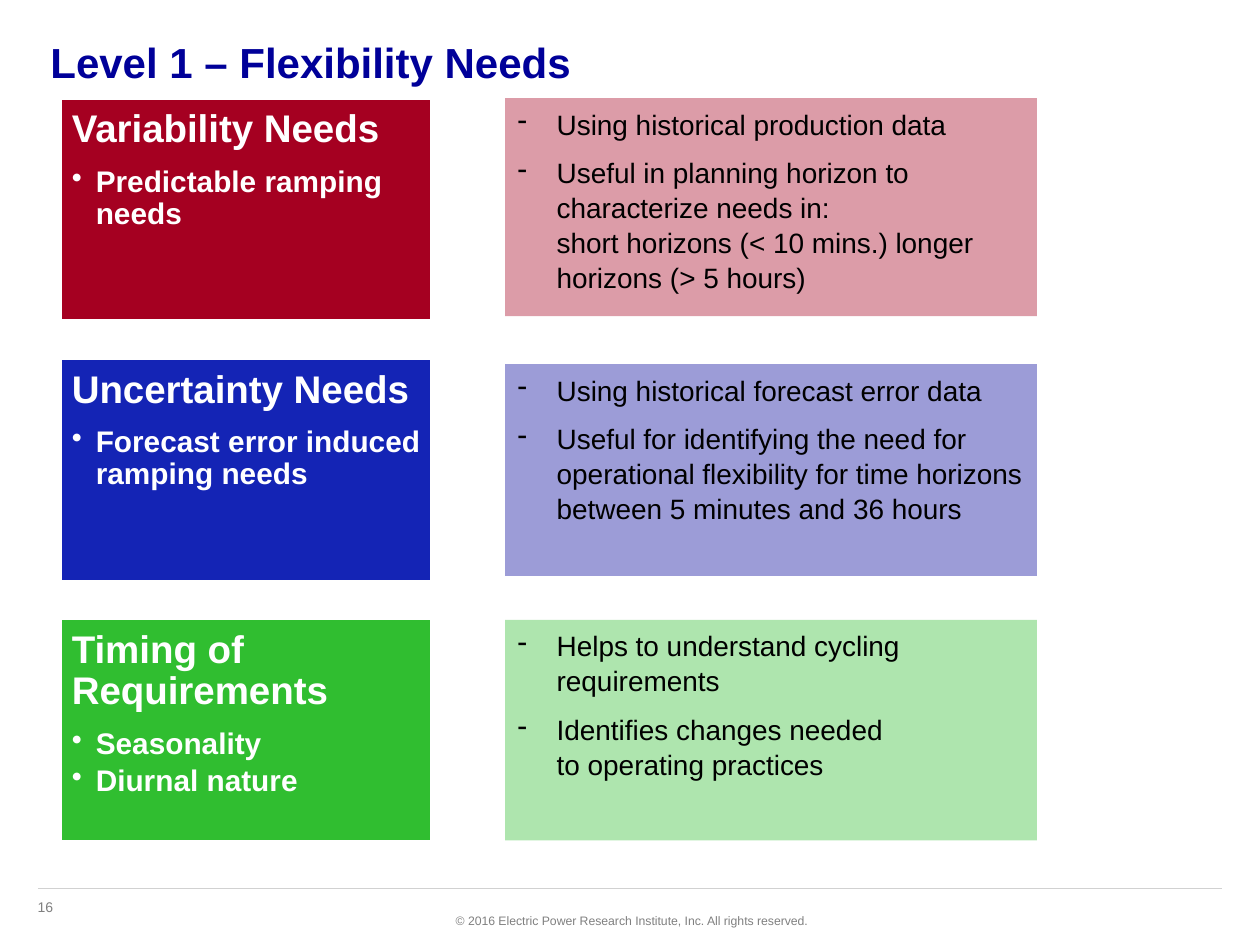
from dataclasses import dataclass

from lxml.etree import SubElement
from pptx import Presentation
from pptx.dml.color import RGBColor
from pptx.enum.shapes import MSO_CONNECTOR, MSO_SHAPE
from pptx.enum.text import MSO_ANCHOR, MSO_AUTO_SIZE, PP_ALIGN
from pptx.oxml.ns import qn
from pptx.util import Inches, Pt


@dataclass(frozen=True)
class Theme:
    font: str = "Arial"
    navy: str = "000099"
    blue: str = "1424B5"
    red: str = "A50021"
    green: str = "30BE30"
    white: str = "FFFFFF"
    black: str = "000000"
    grey: str = "808080"
    rule: str = "D1D1D1"
    title: int = 24
    head: int = 22
    item: int = 17
    note: int = 16
    page: int = 8
    foot: int = 7


def write(para, text, *, theme, size, color, bold=False, align=PP_ALIGN.LEFT,
          mark=None, hang=0, lead=1.0, before=0, after=0):
    """Fill one paragraph and format it."""
    props = para._p.get_or_add_pPr()
    props.set("marL", str(Inches(hang)))
    props.set("indent", str(-Inches(hang)))
    if mark:
        SubElement(props, qn("a:buChar")).set("char", mark)
    else:
        SubElement(props, qn("a:buNone"))
    para.alignment = align
    para.line_spacing = lead
    para.space_before, para.space_after = Pt(before), Pt(after)
    para.text = text
    for run in para.runs:
        font = run.font
        font.name, font.size, font.bold = theme.font, Pt(size), bold
        font.color.rgb = RGBColor.from_string(color)


class Deck:
    """Style and current slide; lengths are cells of a 100 by 75 grid."""

    def __init__(self, theme):
        self.theme = theme
        self.prs = Presentation()
        self.prs.slide_width, self.prs.slide_height = Inches(10), Inches(7.5)
        self.slide = self.prs.slides.add_slide(self.prs.slide_layouts[5])

    def place(self, *cells):
        """Turn grid columns and rows into lengths."""
        wide, high = self.prs.slide_width / 100, self.prs.slide_height / 75
        return [round(n * unit) for n, unit in zip(cells, (wide, high) * 2)]

    def frame(self, shape, side=0.1, top=0.05, wrap=True):
        frame = shape.text_frame
        frame.word_wrap = wrap
        frame.auto_size = MSO_AUTO_SIZE.NONE
        frame.vertical_anchor = MSO_ANCHOR.TOP
        frame.margin_left = frame.margin_right = Inches(side)
        frame.margin_top = frame.margin_bottom = Inches(top)
        return frame

    def title(self, text, box):
        shape = self.slide.shapes.title
        shape.left, shape.top, shape.width, shape.height = self.place(*box)
        write(self.frame(shape, top=0.09).paragraphs[0], text, theme=self.theme,
              size=self.theme.title, color=self.theme.navy, bold=True)

    def text(self, text, box, wrap=True, **style):
        shape = self.slide.shapes.add_textbox(*self.place(*box))
        write(self.frame(shape, wrap=wrap).paragraphs[0], text,
              theme=self.theme, color=self.theme.grey, **style)

    def rect(self, box, color, alpha=None, edge=None):
        shape = self.slide.shapes.add_shape(MSO_SHAPE.RECTANGLE, *self.place(*box))
        shape.shadow.inherit = False
        shape.fill.solid()
        shape.fill.fore_color.rgb = RGBColor.from_string(color)
        if alpha:
            tint = shape._element.spPr.find(".//" + qn("a:srgbClr"))
            SubElement(tint, qn("a:alpha")).set("val", str(alpha * 1000))
        if edge:
            shape.line.color.rgb = RGBColor.from_string(edge)
            shape.line.width = Pt(2)
        else:
            shape.line.fill.background()
        return shape

    def card(self, head, items, box, color):
        look = self.theme
        frame = self.frame(self.rect(box, color, edge=look.white), 0.09, 0.09)
        base = dict(theme=look, color=look.white, bold=True, lead=0.9)
        write(frame.paragraphs[0], head, size=look.head, after=9, **base)
        for item in items:
            write(frame.add_paragraph(), item, size=look.item, mark="•",
                  hang=0.19, after=3, **base)

    def panel(self, notes, box, color):
        look = self.theme
        frame = self.frame(self.rect(box, color, alpha=39), top=0.06)
        for i, note in enumerate(notes):
            para = frame.add_paragraph() if i else frame.paragraphs[0]
            write(para, note, theme=look, size=look.note, color=look.black,
                  mark="-", hang=0.31, lead=1.04, before=8 if i else 0)

    def line(self, start, end, color):
        rule = self.slide.shapes.add_connector(
            MSO_CONNECTOR.STRAIGHT, *self.place(*start, *end))
        rule.line.color.rgb = RGBColor.from_string(color)
        rule.line.width = Pt(0.75)
        SubElement(rule._element.spPr, qn("a:effectLst"))


def main():
    look = Theme()
    deck = Deck(look)

    # Footer
    deck.text("16", (2, 70.8, 6.6, 2.4), size=look.page)
    deck.line((3, 70.5), (97, 70.5), look.rule)
    deck.text("© 2016 Electric Power Research Institute, Inc. All rights reserved.",
              (34.9, 72, 30.2, 2.2), wrap=False, size=look.foot,
              align=PP_ALIGN.RIGHT)

    # Title
    deck.title("Level 1 – Flexibility Needs", (3, 2, 94, 8))

    # Each need: heading, items, colour, then notes, tint, top and height
    needs = [
        ("Variability Needs", ["Predictable ramping needs"], look.red,
         ["Using historical production data",
          "Useful in planning horizon to characterize needs in:\v"
          "short horizons (< 10 mins.) longer horizons (> 5 hours)"],
         look.red, 7.8, 17.3),
        ("Uncertainty Needs", ["Forecast error induced ramping needs"], look.blue,
         ["Using historical forecast error data",
          "Useful for identifying the need for operational flexibility "
          "for time horizons between 5 minutes and 36 hours"],
         look.navy, 28.9, 16.8),
        ("Timing of Requirements", ["Seasonality", "Diurnal nature"], look.green,
         ["Helps to understand cycling\vrequirements",
          "Identifies changes needed\vto operating practices"],
         look.green, 49.2, 17.5),
    ]
    first, step = 7.8, 20.65
    for row, (head, items, color, notes, tint, top, high) in enumerate(needs):
        deck.card(head, items, (4.8, first + row * step, 29.5, 17.7), color)
        deck.panel(notes, (40.1, top, 42.2, high), tint)

    deck.prs.save("out.pptx")


if __name__ == "__main__":
    main()
